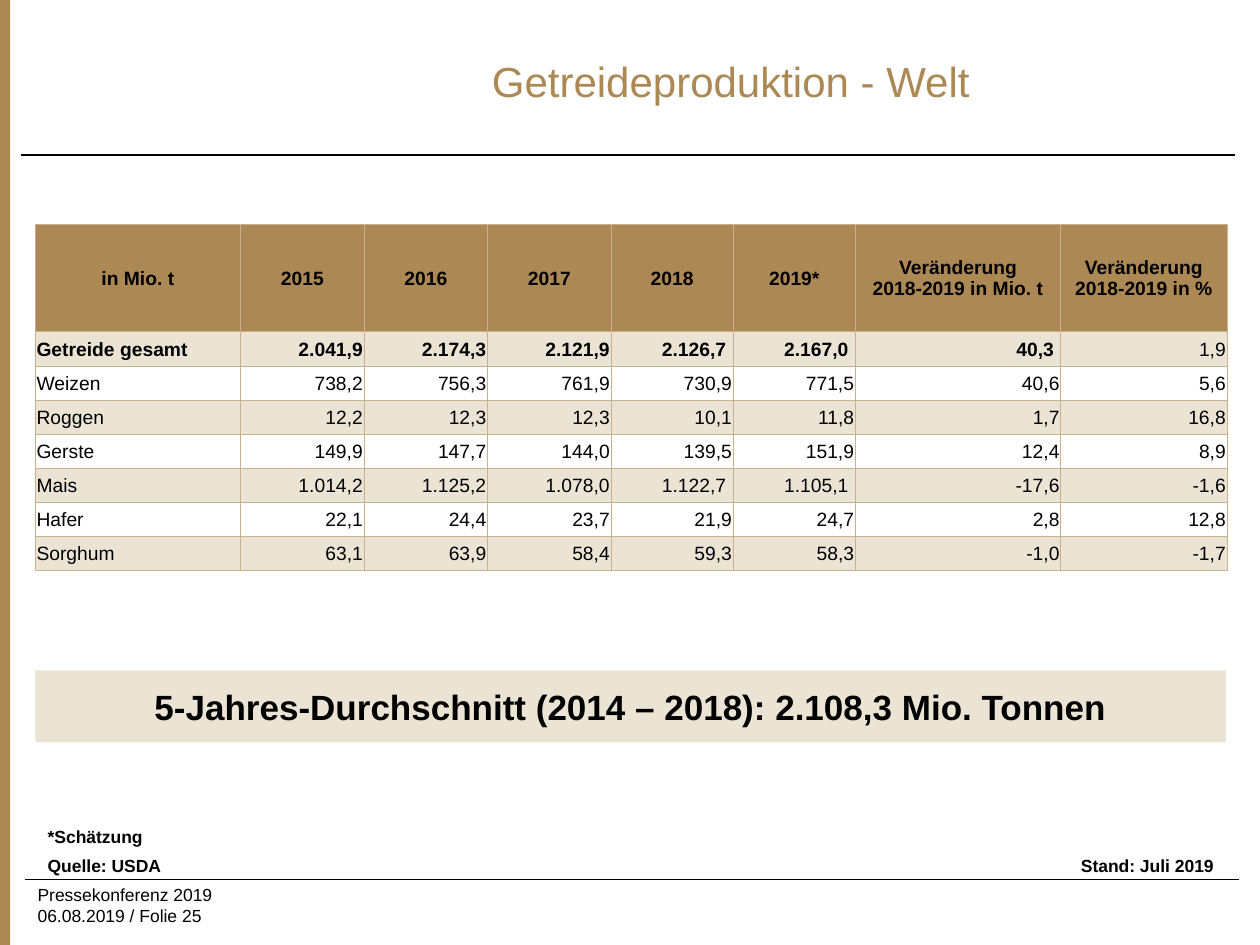
from dataclasses import dataclass

from lxml import etree
from pptx import Presentation
from pptx.dml.color import RGBColor
from pptx.enum.shapes import MSO_CONNECTOR, MSO_SHAPE
from pptx.enum.text import MSO_ANCHOR, MSO_AUTO_SIZE, PP_ALIGN
from pptx.oxml.ns import qn
from pptx.util import Inches, Pt

LEFT, CENTER, RIGHT = PP_ALIGN.LEFT, PP_ALIGN.CENTER, PP_ALIGN.RIGHT
TOP, MIDDLE = MSO_ANCHOR.TOP, MSO_ANCHOR.MIDDLE
NO_AUTOFIT = MSO_AUTO_SIZE.NONE
STRAIGHT, RECTANGLE = MSO_CONNECTOR.STRAIGHT, MSO_SHAPE.RECTANGLE
TITLE_ONLY = 5

# The slide is a grid of 100 columns by 75 rows.
SLIDE_WIDTH, SLIDE_HEIGHT = Inches(10), Inches(7.5)
GRID_COLUMNS, GRID_ROWS = 100, 75


@dataclass(frozen=True)
class Theme:
    font: str = "Arial"
    accent: str = "AC8854"
    tint: str = "EBE4D5"
    grid: str = "C8B18E"
    text: str = "000000"
    title_size: float = 24
    banner_size: float = 20
    table_size: float = 11
    note_size: float = 10
    rule_width: float = 0.75
    border_width: float = 0.5


@dataclass(frozen=True)
class Area:
    """A rectangle in grid columns and rows."""
    column: float
    row: float
    columns: float
    rows: float

    def emu(self) -> tuple[int, int, int, int]:
        return across(self.column), down(self.row), across(self.columns), down(self.rows)


@dataclass(frozen=True)
class Note:
    area: Area
    lines: tuple[str, ...]
    align: PP_ALIGN = LEFT
    bold: bool = True


@dataclass(frozen=True)
class Crop:
    name: str
    values: tuple[str, ...]
    bold_cells: int = 0
    indented: tuple[int, ...] = ()


THEME = Theme()
CONTENT_LEFT, CONTENT_WIDTH = 2.8, 94.5

SIDE_BAR = Area(-0.1, 0, 0.9, GRID_ROWS)
TITLE = Area(18.5, 1.3, 79, 10.2)
BANNER = Area(CONTENT_LEFT, 53.2, CONTENT_WIDTH, 5.7)
RULES = (Area(1.7, 12.3, 96.3, 0), Area(2, 69.8, 96.3, 0))
NOTES = (
    Note(Area(2, 69.7, 33.1, 4), ("Pressekonferenz 2019", "06.08.2019 / Folie 25"), bold=False),
    Note(Area(CONTENT_LEFT, 65.1, CONTENT_WIDTH, 2.4), ("*Schätzung",)),
    Note(Area(CONTENT_LEFT, 67.4, CONTENT_WIDTH, 2.4), ("Quelle: USDA",)),
    Note(Area(CONTENT_LEFT, 67.4, CONTENT_WIDTH, 2.7), ("Stand: Juli 2019",), RIGHT),
)

TABLE_TOP = 17.8
COLUMN_WIDTHS = (16.3, 9.8, 9.8, 9.8, 9.7, 9.7, 16.3, 13.2)
HEADER_ROWS, TOTAL_ROWS, CROP_ROWS = 8.5, 2.8, 2.7
CELL_INSET, INDENTED_INSET = 0.1, 0.55
HEADERS = (
    ("in Mio. t",), ("2015",), ("2016",), ("2017",), ("2018",), ("2019*",),
    ("Veränderung", "2018-2019 in Mio. t"), ("Veränderung 2018-2019 in %",),
)
CROPS = (
    Crop("Getreide gesamt", ("2.041,9", "2.174,3", "2.121,9", "2.126,7", "2.167,0", "40,3", "1,9"),
         bold_cells=7, indented=(4, 5, 6)),
    Crop("Weizen", ("738,2", "756,3", "761,9", "730,9", "771,5", "40,6", "5,6")),
    Crop("Roggen", ("12,2", "12,3", "12,3", "10,1", "11,8", "1,7", "16,8")),
    Crop("Gerste", ("149,9", "147,7", "144,0", "139,5", "151,9", "12,4", "8,9")),
    Crop("Mais", ("1.014,2", "1.125,2", "1.078,0", "1.122,7", "1.105,1", "-17,6", "-1,6"),
         indented=(4, 5)),
    Crop("Hafer", ("22,1", "24,4", "23,7", "21,9", "24,7", "2,8", "12,8")),
    Crop("Sorghum", ("63,1", "63,9", "58,4", "59,3", "58,3", "-1,0", "-1,7")),
)


def across(columns: float) -> int:
    return round(SLIDE_WIDTH * columns / GRID_COLUMNS)


def down(rows: float) -> int:
    return round(SLIDE_HEIGHT * rows / GRID_ROWS)


def rgb(color: str) -> RGBColor:
    return RGBColor.from_string(color)


def add_run(paragraph, text: str, size: float, bold: bool = False, color: str = THEME.text) -> None:
    run = paragraph.add_run()
    run.text = text
    run.font.name, run.font.size, run.font.bold = THEME.font, Pt(size), bold
    run.font.color.rgb = rgb(color)


def draw_title(slide, text: str) -> None:
    title = slide.shapes.title
    title.left, title.top, title.width, title.height = TITLE.emu()
    frame = title.text_frame
    frame.auto_size, frame.vertical_anchor = NO_AUTOFIT, MIDDLE
    frame.paragraphs[0].alignment = CENTER
    add_run(frame.paragraphs[0], text, THEME.title_size, color=THEME.accent)


def draw_panel(slide, area: Area, color: str):
    panel = slide.shapes.add_shape(RECTANGLE, *area.emu())
    panel.shadow.inherit = False
    panel.fill.solid()
    panel.fill.fore_color.rgb = rgb(color)
    panel.line.fill.background()
    return panel


def draw_rule(slide, area: Area) -> None:
    left, top, width, height = area.emu()
    rule = slide.shapes.add_connector(STRAIGHT, left, top, left + width, top + height)
    rule.line.color.rgb, rule.line.width = rgb(THEME.text), Pt(THEME.rule_width)
    etree.SubElement(rule._element.spPr, qn("a:effectLst"))


def draw_note(slide, note: Note) -> None:
    frame = slide.shapes.add_textbox(*note.area.emu()).text_frame
    frame.word_wrap, frame.vertical_anchor = True, TOP
    paragraph = frame.paragraphs[0]
    paragraph.alignment = note.align
    for index, line in enumerate(note.lines):
        if index:
            paragraph.add_line_break()
        add_run(paragraph, line, THEME.note_size, note.bold)


def draw_banner(slide, text: str) -> None:
    frame = draw_panel(slide, BANNER, THEME.tint).text_frame
    frame.word_wrap, frame.vertical_anchor = False, MIDDLE
    frame.paragraphs[0].alignment = CENTER
    add_run(frame.paragraphs[0], text, THEME.banner_size, bold=True)


def add_borders(cell) -> None:
    properties = cell._tc.get_or_add_tcPr()
    for side in ("lnL", "lnR", "lnT", "lnB"):
        border = etree.SubElement(properties, qn(f"a:{side}"), w=str(Pt(THEME.border_width)))
        fill = etree.SubElement(border, qn("a:solidFill"))
        etree.SubElement(fill, qn("a:srgbClr"), val=THEME.grid)


def fill_cell(cell, lines: tuple[str, ...], align: PP_ALIGN, bold: bool,
              color: str | None, right_inset: float = CELL_INSET) -> None:
    add_borders(cell)
    if color:
        cell.fill.solid()
        cell.fill.fore_color.rgb = rgb(color)
    else:
        cell.fill.background()
    cell.vertical_anchor = MIDDLE
    cell.margin_left, cell.margin_right = across(CELL_INSET), across(right_inset)
    cell.margin_top, cell.margin_bottom = down(CELL_INSET), 0
    frame = cell.text_frame
    for index, line in enumerate(lines):
        paragraph = frame.add_paragraph() if index else frame.paragraphs[0]
        paragraph.alignment = align
        add_run(paragraph, line, THEME.table_size, bold)


def draw_table(slide) -> None:
    heights = (HEADER_ROWS, TOTAL_ROWS) + (CROP_ROWS,) * (len(CROPS) - 1)
    area = Area(CONTENT_LEFT, TABLE_TOP, sum(COLUMN_WIDTHS), sum(heights))
    table = slide.shapes.add_table(len(heights), len(COLUMN_WIDTHS), *area.emu()).table
    table.horz_banding = False
    for column, width in zip(table.columns, COLUMN_WIDTHS):
        column.width = across(width)
    for row, height in zip(table.rows, heights):
        row.height = down(height)
    for column, lines in enumerate(HEADERS):
        fill_cell(table.cell(0, column), lines, CENTER, True, THEME.accent)
    for row, crop in enumerate(CROPS, start=1):
        color = THEME.tint if row % 2 else None
        for column, text in enumerate((crop.name, *crop.values)):
            fill_cell(table.cell(row, column), (text,), RIGHT if column else LEFT,
                      column < crop.bold_cells, color,
                      INDENTED_INSET if column in crop.indented else CELL_INSET)


def main() -> None:
    presentation = Presentation()
    presentation.slide_width, presentation.slide_height = SLIDE_WIDTH, SLIDE_HEIGHT
    slide = presentation.slides.add_slide(presentation.slide_layouts[TITLE_ONLY])
    draw_panel(slide, SIDE_BAR, THEME.accent)
    draw_title(slide, "Getreideproduktion - Welt")
    for rule in RULES:
        draw_rule(slide, rule)
    for note in NOTES:
        draw_note(slide, note)
    draw_banner(slide, "5-Jahres-Durchschnitt (2014 – 2018): 2.108,3 Mio. Tonnen")
    draw_table(slide)
    presentation.save("out.pptx")


if __name__ == "__main__":
    main()
